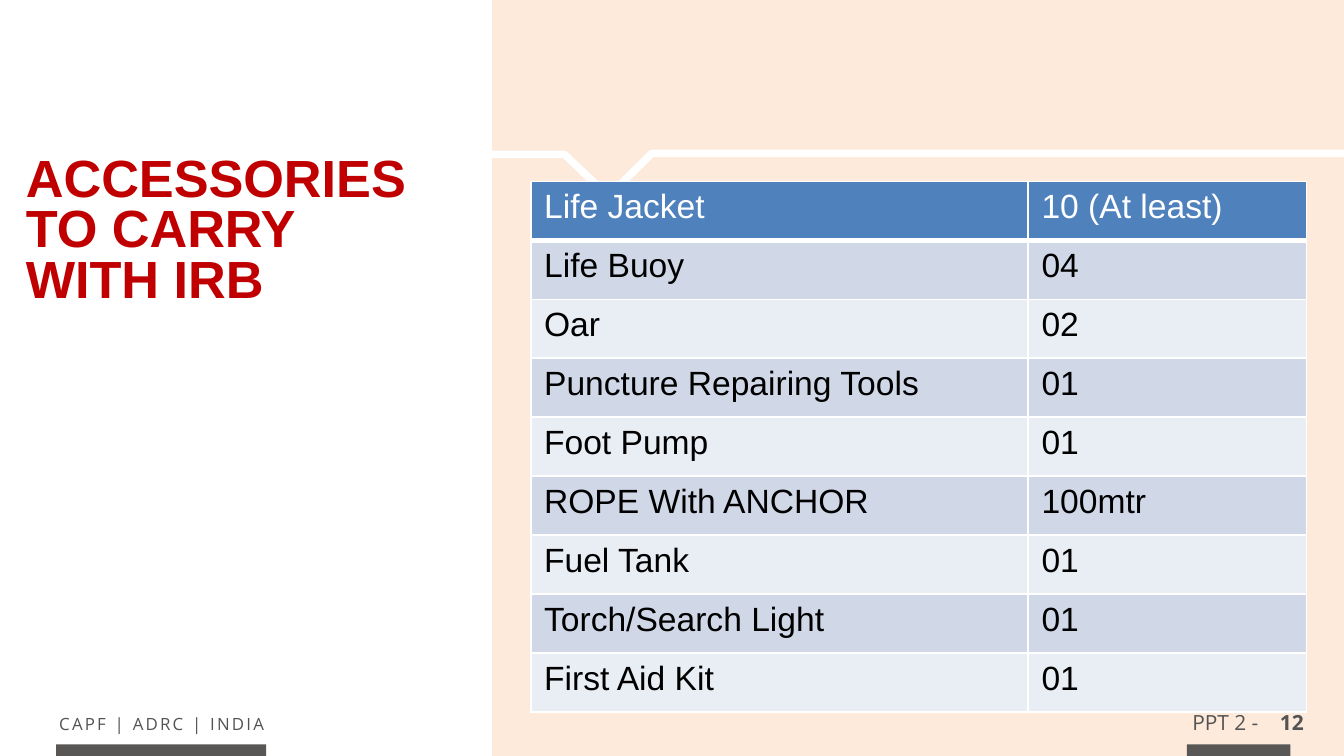
from lxml import etree
from pptx import Presentation, util as u
from pptx.dml.color import RGBColor
from pptx.enum import shapes, text
from pptx.oxml.ns import qn

GREY, WHITE = "535353", "FFFFFF"


def rgb(code):
    return RGBColor.from_string(code)


def label(box, words, size, font, color, bold=False, inset=0.08, wrap=True):
    area = slide.shapes.add_textbox(*[u.Cm(n) for n in box])
    frame = area.text_frame
    frame.word_wrap = wrap
    frame.margin_left = frame.margin_right = u.Cm(inset)
    frame.margin_top = frame.margin_bottom = u.Cm(inset)
    para = frame.paragraphs[0]
    para.text = words
    para.alignment = text.PP_ALIGN.CENTER
    para.font.size, para.font.name = u.Pt(size), font
    para.font.bold, para.font.color.rgb = bold, rgb(color)
    return para


deck = Presentation()
deck.slide_width, deck.slide_height = u.Cm(25.4), u.Cm(14.29)
slide = deck.slides.add_slide(deck.slide_layouts[6])

# Right panel and footer bars
for left, top, width, height, color in [
    (9.3, 0, 16.1, 14.29, "FDEADA"),
    (1.06, 14.07, 3.97, 0.22, "585756"),
    (22.43, 14.07, 1.96, 0.22, "585756"),
]:
    bar = slide.shapes.add_shape(
        shapes.MSO_SHAPE.RECTANGLE, u.Cm(left), u.Cm(top), u.Cm(width), u.Cm(height))
    bar.shadow.inherit = False
    bar.fill.solid()
    bar.fill.fore_color.rgb = rgb(color)
    bar.line.fill.background()

# Notched white line
notch = [(7.92, 2.92), (10.67, 2.92), (11.5, 3.71), (12.32, 2.9), (25.63, 2.9)]
pts = [(u.Cm(x), u.Cm(y)) for x, y in notch]
pen = slide.shapes.build_freeform(*pts[0])
pen.add_line_segments(pts[1:], close=False)
rule = pen.convert_to_shape()
rule.shadow.inherit = False
rule.fill.background()
rule.line.color.rgb = rgb(WHITE)
rule.line.width = u.Pt(4)

# Footer
foot = label((0.64, 13.41, 4.83, 0.56), "CAPF | ADRC | INDIA", 9, "Open Sans", GREY)
foot.runs[0]._r.get_or_add_rPr().set("spc", "120")
label((22.45, 13.34, 1.42, 0.64), "PPT 2 -", 11.2, "Open Sans", GREY, wrap=False)
label((23.88, 13.18, 1.07, 0.71), "12", 11.2, "Open Sans", GREY, True, 0.23)

# Title
title = label((0.41, 2.9, 7.72, 3.07), "ACCESSORIES TO CARRY WITH IRB",
              28, "Arial", "C00000", True)
title.alignment = text.PP_ALIGN.LEFT
title.line_spacing = 0.8

# Equipment table
items = [
    ("Life Jacket", "10 (At least)"),
    ("Life Buoy", "04"),
    ("Oar", "02"),
    ("Puncture Repairing Tools", "01"),
    ("Foot Pump", "01"),
    ("ROPE With ANCHOR", "100mtr"),
    ("Fuel Tank", "01"),
    ("Torch/Search Light", "01"),
    ("First Aid Kit", "01"),
]
grid = slide.shapes.add_table(
    len(items), 2, u.Cm(10.03), u.Cm(3.43), u.Cm(14.66), u.Cm(10.03)).table
grid.first_row = grid.horz_banding = False
grid.columns[0].width, grid.columns[1].width = u.Cm(9.4), u.Cm(5.26)

for i, item in enumerate(items):
    head = i == 0
    for j, words in enumerate(item):
        cell = grid.cell(i, j)

        # Borders go before the fill
        props = cell._tc.get_or_add_tcPr()
        for side in ("lnL", "lnR", "lnT", "lnB"):
            thick = (head and side == "lnB") or (i == 1 and side == "lnT")
            edge = etree.SubElement(props, qn("a:" + side), w=str(u.Pt(3 if thick else 1)))
            fill = etree.SubElement(edge, qn("a:solidFill"))
            etree.SubElement(fill, qn("a:srgbClr"), val=WHITE)

        cell.fill.solid()
        cell.fill.fore_color.rgb = rgb("4F81BD" if head else "D0D8E8" if i % 2 else "E9EDF4")
        cell.text = words
        font = cell.text_frame.paragraphs[0].font
        font.size, font.name = u.Pt(18), "Arial"
        font.color.rgb = rgb(WHITE if head else "000000")

deck.save("out.pptx")
